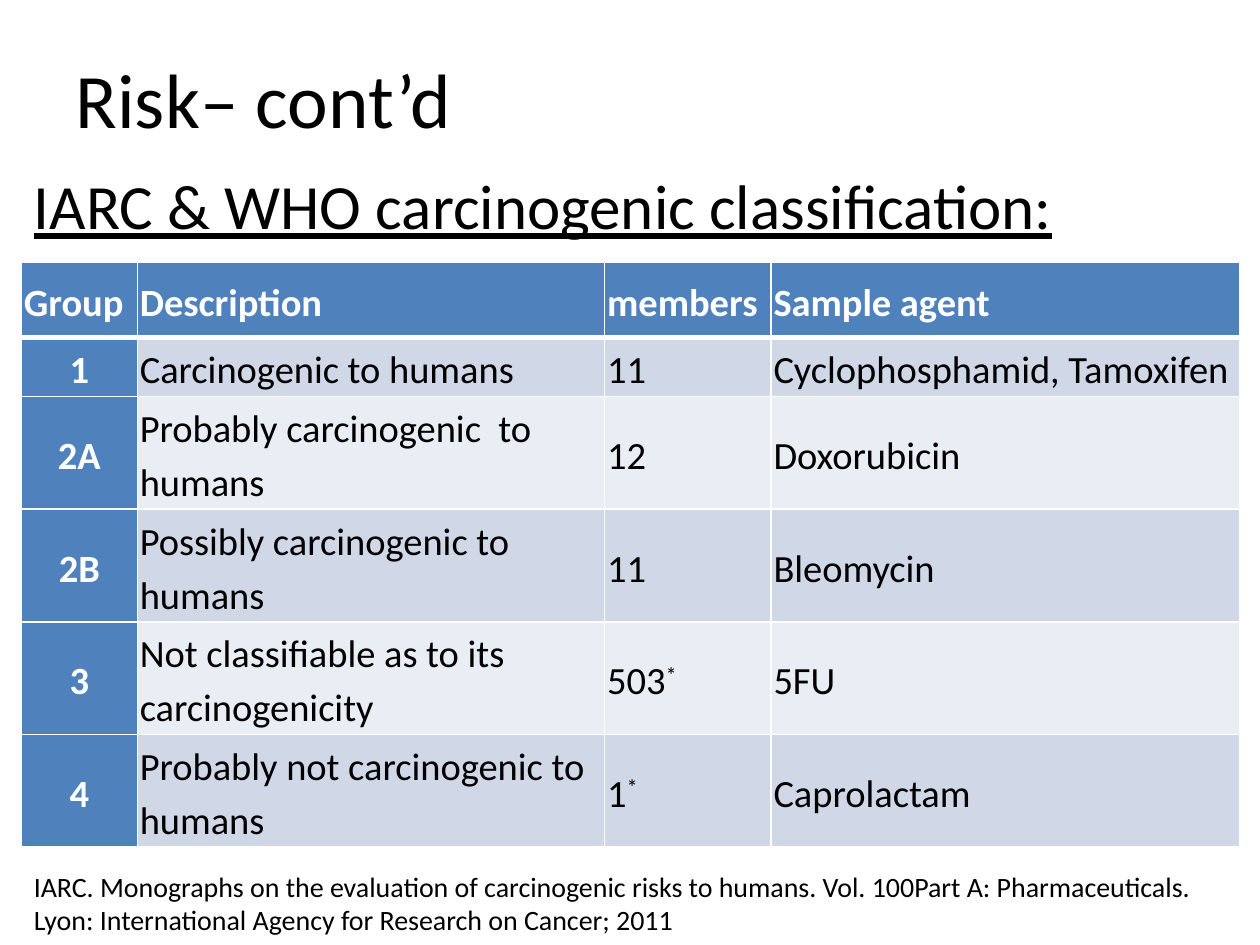
import dataclasses

import lxml.etree
import pptx
import pptx.dml.color
import pptx.enum.text
import pptx.oxml.ns
import pptx.util

Inches = pptx.util.Inches
Align = pptx.enum.text.PP_ALIGN
Anchor = pptx.enum.text.MSO_ANCHOR


@dataclasses.dataclass(frozen=True)
class Theme:
    font: str = "Calibri"
    ink: str = "000000"
    paper: str = "FFFFFF"
    accent: str = "4F81BD"
    bands: tuple = ("D0D8E8", "E9EDF4")
    title_size: int = 44
    subtitle_size: int = 36
    table_size: int = 22
    source_size: int = 16


class Page:
    def __init__(self, deck, theme):
        self.theme = theme
        self.slide = deck.slides.add_slide(deck.slide_layouts[5])

    def style(self, span, size, color, bold=False, underline=False):
        span.font.name = self.theme.font
        span.font.size = pptx.util.Pt(size)
        span.font.bold = bold
        span.font.underline = underline
        span.font.color.rgb = pptx.dml.color.RGBColor.from_string(color)

    def fill_text(self, box, place, text, size, underline=False):
        box.left, box.top, box.width, box.height = map(Inches, place)
        frame = box.text_frame
        frame.word_wrap = True
        frame.auto_size = pptx.enum.text.MSO_AUTO_SIZE.NONE
        frame.vertical_anchor = Anchor.MIDDLE
        frame.text = text
        para = frame.paragraphs[0]
        para.alignment = Align.LEFT
        self.style(para.runs[0], size, self.theme.ink, underline=underline)

    def title(self, place, text):
        self.fill_text(self.slide.shapes.title, place, text, self.theme.title_size)

    def text(self, place, text, size, underline=False):
        box = self.slide.shapes.add_textbox(*map(Inches, place))
        self.fill_text(box, place, text, size, underline)

    def border(self, cell, side, points):
        properties = cell._tc.get_or_add_tcPr()
        name = pptx.oxml.ns.qn
        line = lxml.etree.SubElement(properties, name(f"a:ln{side}"), w=str(pptx.util.Pt(points)))
        solid = lxml.etree.SubElement(line, name("a:solidFill"))
        lxml.etree.SubElement(solid, name("a:srgbClr"), val=self.theme.paper)

    def cell(self, cell, text, row, column):
        header = row == 0
        strong = header or column == 0
        cell.margin_left = cell.margin_right = Inches(0.02)
        cell.margin_top = cell.margin_bottom = Inches(0.02)
        cell.vertical_anchor = Anchor.MIDDLE
        para = cell.text_frame.paragraphs[0]
        para.text = text.rstrip("*")
        if text.endswith("*"):
            mark = para.add_run()
            mark.text = "*"
            mark._r.get_or_add_rPr().set("baseline", "30000")
        para.line_spacing = 1.15
        para.alignment = Align.JUSTIFY
        if not header and column < 2:
            para.alignment = (Align.CENTER, Align.LEFT)[column]
        for span in para.runs:
            self.style(span, self.theme.table_size, self.theme.paper if strong else self.theme.ink, strong)
        for side in "LRTB":
            thick = (row, side) in ((0, "B"), (1, "T"))
            self.border(cell, side, 3 if thick else 1)
        color = self.theme.accent if strong else self.theme.bands[(row - 1) % 2]
        cell.fill.solid()
        cell.fill.fore_color.rgb = pptx.dml.color.RGBColor.from_string(color)

    def table(self, left, top, widths, heights, rows):
        frame = self.slide.shapes.add_table(
            len(rows), len(widths), Inches(left), Inches(top), Inches(sum(widths)), Inches(sum(heights))
        )
        table = frame.table
        for column, width in zip(table.columns, widths):
            column.width = Inches(width)
        for row, height in zip(table.rows, heights):
            row.height = Inches(height)
        for row, texts in enumerate(rows):
            for column, text in enumerate(texts):
                self.cell(table.cell(row, column), text, row, column)


CLASSIFICATION = [
    ("Group", "Description", "members", "Sample agent"),
    ("1", "Carcinogenic to humans", "11", "Cyclophosphamid, Tamoxifen"),
    ("2A", "Probably carcinogenic  to humans", "12", "Doxorubicin"),
    ("2B", "Possibly carcinogenic to humans", "11", "Bleomycin"),
    ("3", "Not classifiable as to its carcinogenicity", "503*", "5FU"),
    ("4", "Probably not carcinogenic to humans", "1*", "Caprolactam"),
]


def main():
    deck = pptx.Presentation()
    deck.slide_width, deck.slide_height = Inches(10), Inches(7.5)
    theme = Theme()
    page = Page(deck, theme)
    page.title((0.5, 0.3, 9, 0.95), "Risk– cont’d")
    page.table(0.17, 2.08, (0.92, 3.71, 1.32, 3.72), (0.6, 0.45) + (0.88,) * 4, CLASSIFICATION)
    page.text((0.17, 1, 9.83, 1.25), "IARC & WHO carcinogenic classification:", theme.subtitle_size, underline=True)
    page.text(
        (0.17, 6.83, 9.67, 0.67),
        "IARC. Monographs on the evaluation of carcinogenic risks to humans. Vol. 100Part A: Pharmaceuticals. "
        "Lyon: International Agency for Research on Cancer; 2011",
        theme.source_size,
    )
    deck.save("out.pptx")


if __name__ == "__main__":
    main()
